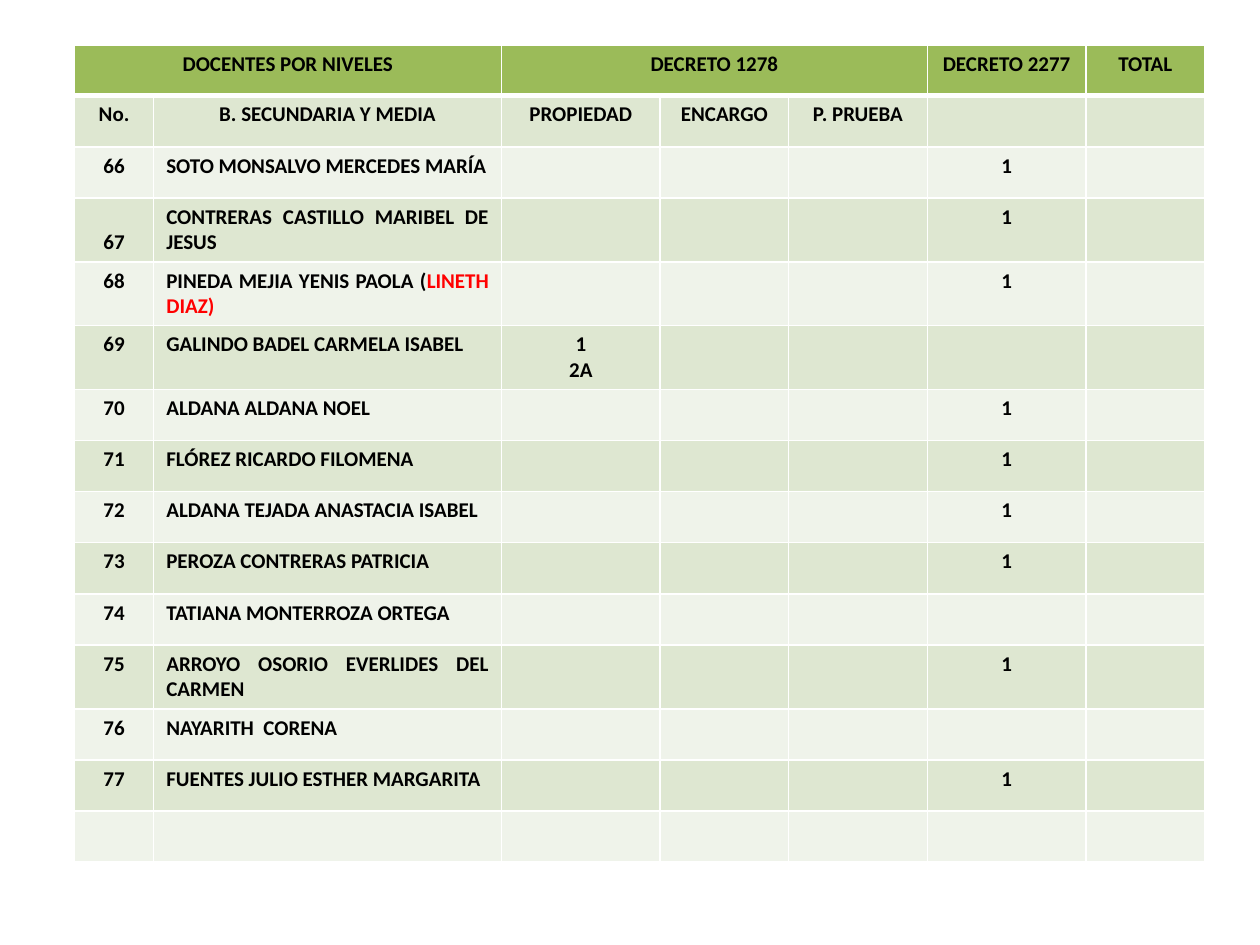
"""Build a slide with a table of secondary school teachers by decree."""
from dataclasses import dataclass

from lxml import etree
from pptx import Presentation
from pptx.dml.color import RGBColor
from pptx.enum import text
from pptx.oxml import ns
from pptx.util import Inches, Pt


@dataclass(frozen=True)
class Theme:
    font: str = "Calibri"
    size: int = 12
    ink: str = "000000"
    accent: str = "FF0000"
    header: str = "9BBB59"
    bands: tuple = ("EFF3EA", "DEE7D1")
    border: str = "FFFFFF"
    thin: int = 1
    thick: int = 3


theme = Theme()


def set_borders(cell, bottom):
    tc_pr = cell._tc.get_or_add_tcPr()
    widths = {"lnL": theme.thin, "lnR": theme.thin, "lnT": theme.thin, "lnB": bottom}
    for side, width in widths.items():
        ln = etree.SubElement(tc_pr, ns.qn(f"a:{side}"), w=str(Pt(width)))
        fill = etree.SubElement(ln, ns.qn("a:solidFill"))
        etree.SubElement(fill, ns.qn("a:srgbClr"), val=theme.border)


def set_text(cell, content, align):
    tf = cell.text_frame
    tf.text = content
    for p in tf.paragraphs:
        p.alignment = align
        for r in p.runs:
            r.font.name = theme.font
            r.font.size = Pt(theme.size)
            r.font.bold = True
            r.font.color.rgb = RGBColor.from_string(theme.ink)


teachers = [
    ("SOTO MONSALVO MERCEDES MARÍA", "", "1"),
    ("CONTRERAS CASTILLO MARIBEL DE JESUS", "", "1"),
    ("PINEDA MEJIA YENIS PAOLA (", "", "1"),
    ("GALINDO BADEL CARMELA ISABEL", "1\n2A", ""),
    ("ALDANA ALDANA NOEL", "", "1"),
    ("FLÓREZ RICARDO FILOMENA", "", "1"),
    ("ALDANA TEJADA ANASTACIA ISABEL", "", "1"),
    ("PEROZA CONTRERAS PATRICIA", "", "1"),
    ("TATIANA MONTERROZA ORTEGA", "", ""),
    ("ARROYO OSORIO EVERLIDES DEL CARMEN", "", "1"),
    ("NAYARITH  CORENA", "", ""),
    ("FUENTES JULIO ESTHER MARGARITA", "", "1"),
]
rows = [
    ["DOCENTES POR NIVELES", "", "DECRETO 1278", "", "", "DECRETO 2277", "TOTAL"],
    ["No.", "B. SECUNDARIA Y MEDIA", "PROPIEDAD", "ENCARGO", "P. PRUEBA", "", ""],
]
for number, (name, owned, decree_2277) in enumerate(teachers, start=66):
    rows.append([str(number), name, owned, "", "", decree_2277, ""])
rows.append([""] * 7)
col_widths = [0.63, 2.76, 1.26, 1.02, 1.1, 1.26, 0.94]
row_height = 0.4

prs = Presentation()
prs.slide_width, prs.slide_height = Inches(10), Inches(7.5)
s = prs.slides.add_slide(prs.slide_layouts[6])
table = s.shapes.add_table(
    len(rows), len(col_widths), Inches(0.59), Inches(0.36),
    Inches(sum(col_widths)), Inches(row_height * len(rows)),
).table
for column, width in zip(table.columns, col_widths):
    column.width = Inches(width)
for row in table.rows:
    row.height = Inches(row_height)

for i, values in enumerate(rows):
    for j, value in enumerate(values):
        cell = table.cell(i, j)
        set_borders(cell, theme.thick if i == 0 else theme.thin)
        cell.fill.solid()
        color = theme.header if i == 0 else theme.bands[i % 2]
        cell.fill.fore_color.rgb = RGBColor.from_string(color)
        if value:
            is_name = i > 1 and j == 1
            align = text.PP_ALIGN.JUSTIFY if is_name else text.PP_ALIGN.CENTER
            set_text(cell, value, align)

for first, last in ((0, 1), (2, 4)):
    table.cell(0, first).merge(table.cell(0, last))

table.cell(3, 0).vertical_anchor = text.MSO_ANCHOR.BOTTOM

r = table.cell(4, 1).text_frame.paragraphs[0].add_run()
r.text = "LINETH DIAZ)"
r.font.name = theme.font
r.font.size = Pt(theme.size)
r.font.bold = True
r.font.color.rgb = RGBColor.from_string(theme.accent)

prs.save("out.pptx")
